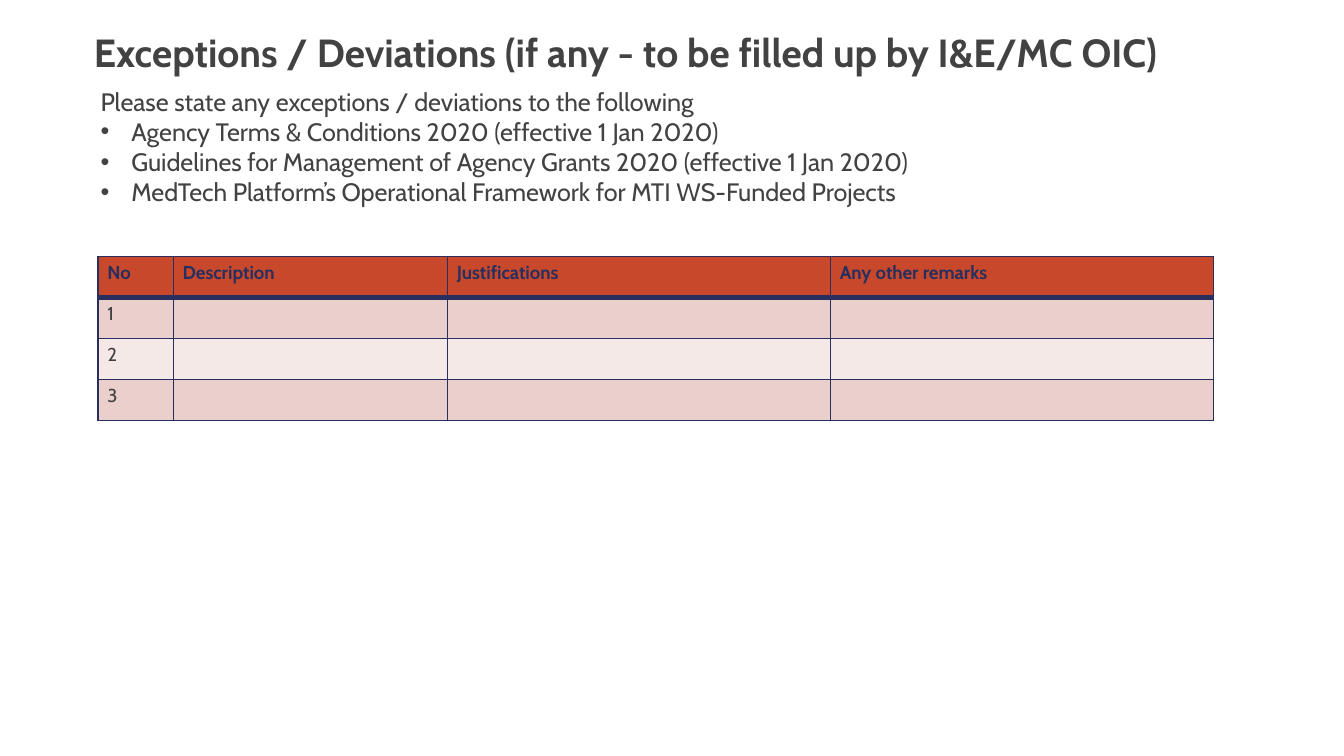
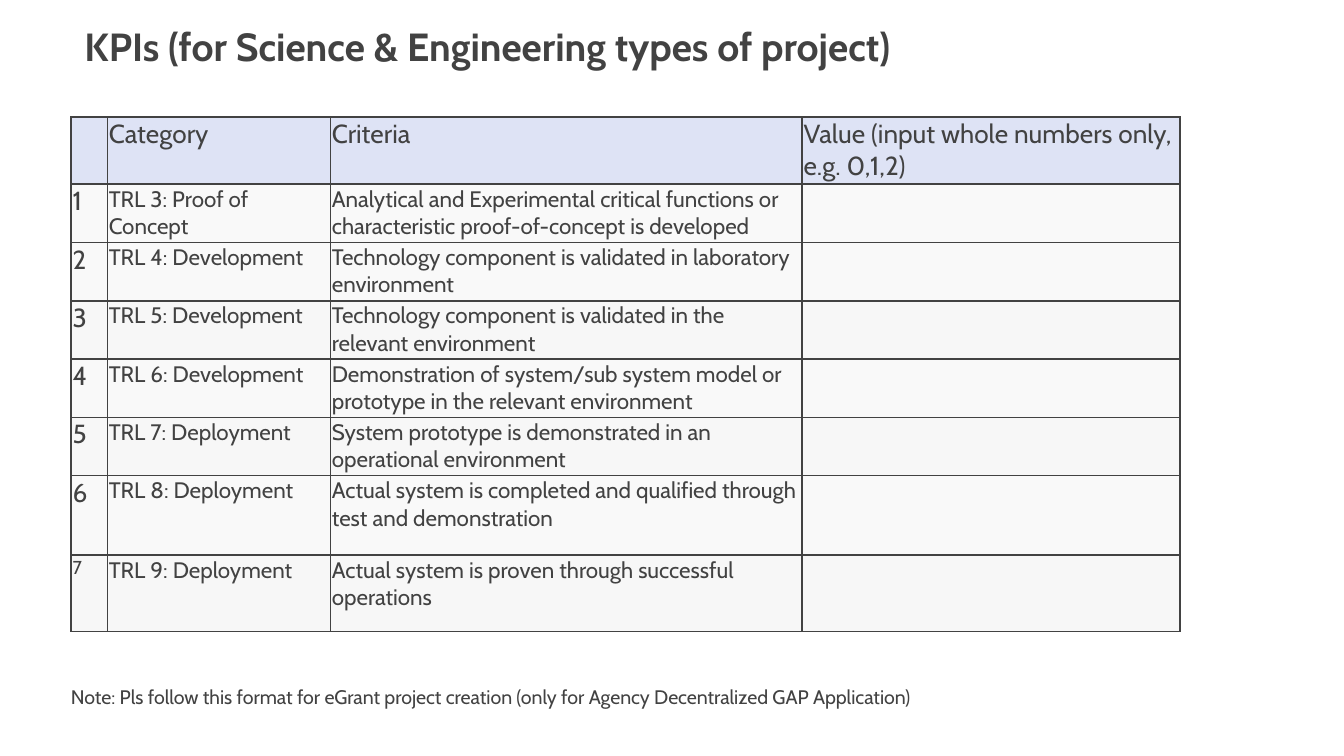
from dataclasses import dataclass

import pptx
import pptx.dml.color
import pptx.enum.text
import pptx.oxml.ns
import pptx.util
from lxml import etree

Inches = pptx.util.Inches
Pt = pptx.util.Pt
qn = pptx.oxml.ns.qn
Align = pptx.enum.text.PP_ALIGN

FONT = "Cabin"
COLORS = {
    "text": "424242",
    "navy": "282F5F",
    "rust": "C7482B",
    "rose": "EBCFCD",
    "blush": "F5E9E8",
    "lavender": "DEE3F5",
    "pale": "F9F9F9",
    "mist": "F7F7F7",
}


@dataclass(frozen=True)
class Box:
    left: float
    top: float
    width: float
    height: float

    def lengths(self) -> tuple:
        return tuple(Inches(v) for v in (self.left, self.top, self.width, self.height))


@dataclass(frozen=True)
class Line:
    text: str
    indent: float = 0
    hanging: float = 0
    bullet: str = ""


@dataclass(frozen=True)
class CellStyle:
    size: float
    color: str = "text"
    bold: bool = False


@dataclass(frozen=True)
class Grid:
    box: Box
    columns: tuple
    row_heights: tuple
    rows: tuple
    fills: tuple
    header: CellStyle
    body: tuple
    border: str
    header_rule: float
    inset_x: float
    inset_y: float


def rgb(name: str) -> pptx.dml.color.RGBColor:
    return pptx.dml.color.RGBColor.from_string(COLORS[name])


def write(paragraph, text: str, *, size: float, color: str = "text", bold: bool = False,
          align=Align.LEFT, spacing: float = 1.0) -> None:
    paragraph.alignment = align
    paragraph.line_spacing = spacing
    if not text:
        etree.SubElement(paragraph._p, qn("a:endParaRPr"), sz=str(int(size * 100)))
        return
    run = paragraph.add_run()
    run.text = text
    run.font.name = FONT
    run.font.size = Pt(size)
    run.font.bold = bold
    run.font.color.rgb = rgb(color)


def indent(paragraph, line: Line) -> None:
    properties = paragraph._p.get_or_add_pPr()
    properties.set("marL", str(Inches(line.indent)))
    properties.set("indent", str(Inches(-line.hanging)))
    if line.bullet:
        etree.SubElement(properties, qn("a:buFont"), typeface="Arial")
        etree.SubElement(properties, qn("a:buChar"), char=line.bullet)


def add_text(slide, box: Box, lines: tuple, *, grow: bool = True, **style) -> None:
    frame = slide.shapes.add_textbox(*box.lengths()).text_frame
    frame.word_wrap = True
    if grow:
        frame.auto_size = pptx.enum.text.MSO_AUTO_SIZE.SHAPE_TO_FIT_TEXT
    for number, line in enumerate(lines):
        paragraph = frame.add_paragraph() if number else frame.paragraphs[0]
        indent(paragraph, line)
        write(paragraph, line.text, **style)


def add_title(slide, box: Box, text: str, **style) -> None:
    add_text(slide, box, (Line(text),), size=21, bold=True, **style)


def set_borders(cell, color: str, widths: dict) -> None:
    properties = cell._tc.get_or_add_tcPr()
    for side in "LRTB":
        line = etree.SubElement(properties, qn(f"a:ln{side}"), w=str(Pt(widths.get(side, 1))))
        fill = etree.SubElement(line, qn("a:solidFill"))
        etree.SubElement(fill, qn("a:srgbClr"), val=COLORS[color])


def add_grid(slide, grid: Grid) -> None:
    table = slide.shapes.add_table(len(grid.rows), len(grid.columns), *grid.box.lengths()).table
    table.horz_banding = False
    for column, width in zip(table.columns, grid.columns):
        column.width = Inches(width)
    for r, (texts, height, fill) in enumerate(zip(grid.rows, grid.row_heights, grid.fills)):
        table.rows[r].height = Inches(height)
        rules = {0: {"B": grid.header_rule}, 1: {"T": grid.header_rule}}.get(r, {})
        for c, text in enumerate(texts):
            cell = table.cell(r, c)
            set_borders(cell, grid.border, rules)
            cell.margin_left = cell.margin_right = Inches(grid.inset_x)
            cell.margin_top = cell.margin_bottom = Inches(grid.inset_y)
            cell.fill.solid()
            cell.fill.fore_color.rgb = rgb(fill)
            style = grid.body[r - 1][c] if r else grid.header
            write(cell.text_frame.paragraphs[0], text,
                  size=style.size, color=style.color, bold=style.bold)


def build_exceptions(slide) -> None:
    add_title(slide, Box(0.6, 0.16, 9.08, 0.45),
              "Exceptions / Deviations (if any - to be filled up by I&E/MC OIC)")
    references = (
        "Agency Terms & Conditions 2020 (effective 1 Jan 2020)",
        "Guidelines for Management of Agency Grants 2020 (effective 1 Jan 2020)",
        "MedTech Platform’s Operational Framework for MTI WS-Funded Projects",
    )
    intro = Line("Please state any exceptions / deviations to the following", indent=0.05)
    bullets = tuple(Line(text, 0.28, 0.23, "•") for text in references)
    add_text(slide, Box(0.6, 0.59, 9.2, 1.01), (intro, *bullets), size=13.5)

    entries = 3
    box = Box(0.73, 1.91, 8.3, 1.22)
    add_grid(slide, Grid(
        box=box,
        columns=(0.56, 2.04, 2.85, 2.85),
        row_heights=(box.height / (entries + 1),) * (entries + 1),
        rows=(("No", "Description", "Justifications", "Any other remarks"),
              *((str(n), "", "", "") for n in range(1, entries + 1))),
        fills=("rust", "rose", "blush", "rose"),
        header=CellStyle(10, "navy", True),
        body=((CellStyle(10),) * 4,) * entries,
        border="navy",
        header_rule=3,
        inset_x=0.07,
        inset_y=0.04,
    ))


def build_kpis(slide) -> None:
    add_title(slide, Box(0.53, -0.02, 8.82, 0.56),
              "KPIs (for Science & Engineering types of project)", grow=False, spacing=1.4)
    levels = (
        ("Proof of Concept", "Analytical and Experimental critical functions or "
                             "characteristic proof-of-concept is developed"),
        ("Development", "Technology component is validated in laboratory environment"),
        ("Development", "Technology component is validated in the relevant environment"),
        ("Development", "Demonstration of system/sub system model or prototype "
                        "in the relevant environment"),
        ("Deployment", "System prototype is demonstrated in an operational environment"),
        ("Deployment", "Actual system is completed and qualified through "
                       "test and demonstration"),
        ("Deployment", "Actual system is proven through successful operations"),
    )
    number_sizes = (14,) * 6 + (10,)
    add_grid(slide, Grid(
        box=Box(0.53, 0.87, 8.25, 3.79),
        columns=(0.27, 1.66, 3.51, 2.81),
        row_heights=(0.5, *(2.17 / 5,) * 5, 0.59, 0.57),
        rows=(("", "Category", "Criteria", "Value (input whole numbers only, e.g. 0,1,2)"),
              *((str(n), f"TRL {n + 2}: {stage}", criteria, "")
                for n, (stage, criteria) in enumerate(levels, 1))),
        fills=("lavender", "pale", *("pale", "mist") * 3),
        header=CellStyle(14),
        body=tuple((CellStyle(size), *(CellStyle(12),) * 3) for size in number_sizes),
        border="text",
        header_rule=1,
        inset_x=0.01,
        inset_y=0.01,
    ))
    note = Line("Note: Pls follow this format for eGrant project creation "
                "(only for Agency Decentralized GAP Application)")
    add_text(slide, Box(0.43, 5.05, 8.8, 0.28), (note,), size=10.5, align=Align.JUSTIFY)


def main() -> None:
    deck = pptx.Presentation()
    deck.slide_width = Inches(10)
    deck.slide_height = deck.slide_width * 9 // 16
    for build in (build_exceptions, build_kpis):
        build(deck.slides.add_slide(deck.slide_layouts[6]))
    deck.save("out.pptx")


if __name__ == "__main__":
    main()
